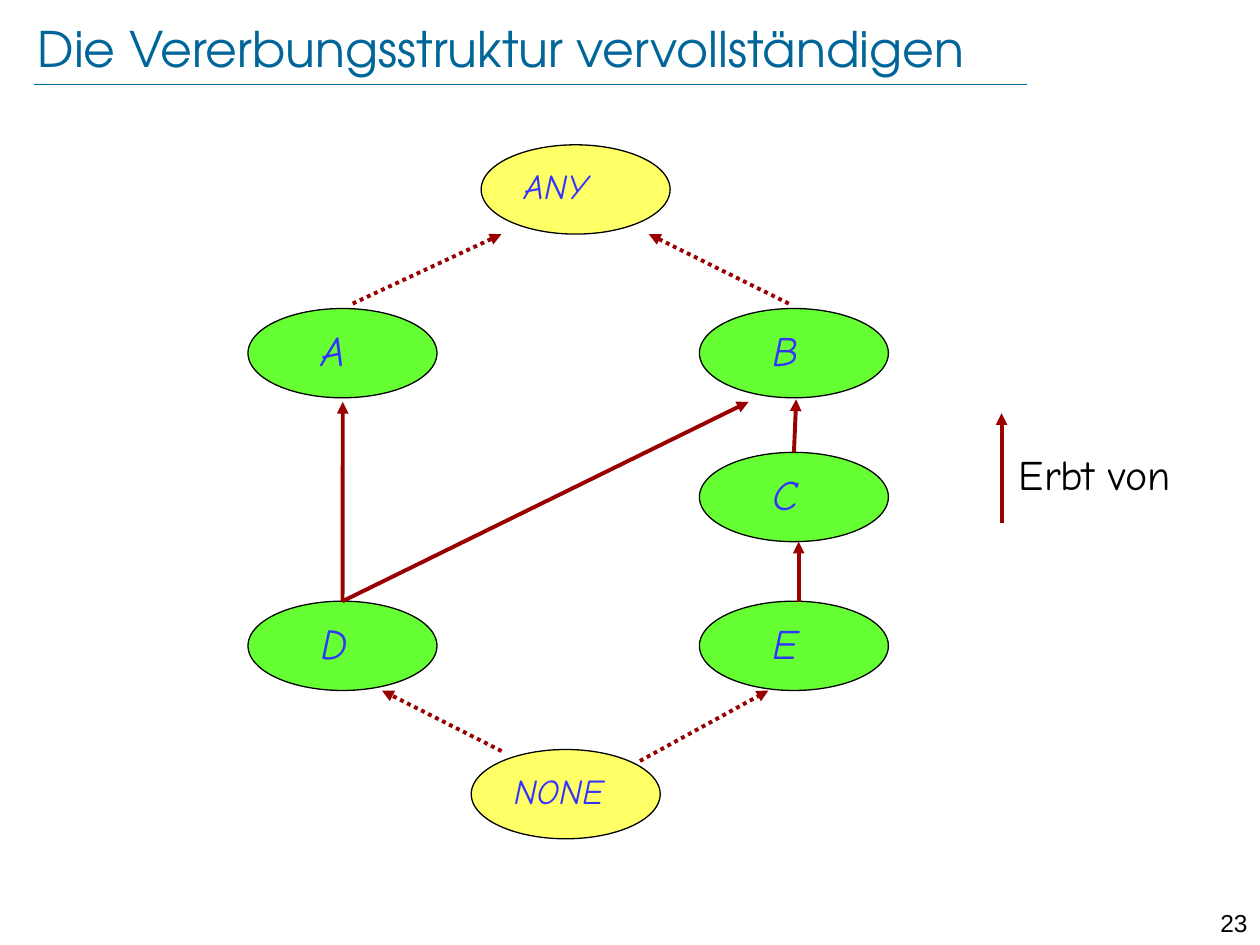
from lxml import etree
from pptx import Presentation
from pptx.dml.color import RGBColor
from pptx.enum.dml import MSO_LINE
from pptx.enum.shapes import MSO_CONNECTOR, MSO_SHAPE
from pptx.enum.text import MSO_ANCHOR, MSO_AUTO_SIZE, PP_ALIGN
from pptx.oxml.ns import qn
from pptx.util import Cm, Pt

STRAIGHT = MSO_CONNECTOR.STRAIGHT
ELLIPSE = MSO_SHAPE.OVAL
DOTTED = MSO_LINE.ROUND_DOT
LEFT, RIGHT = PP_ALIGN.LEFT, PP_ALIGN.RIGHT
TOP_SITE = 0

# Content, lengths in cm
TITLE = "Die Vererbungsstruktur vervollständigen"
LEGEND = "Erbt von"
PAGE_NUMBER = "23"
GREEN, YELLOW, RED, BLUE = "66FF33", "FFFF66", "990000", "006699"
LABEL_COLOR, BLACK = "3333FF", "000000"
LABEL_FONT = "Comic Neue"
NODE_WIDTH, NODE_HEIGHT = 3.81, 1.8
LEFT_COLUMN, RIGHT_COLUMN = 5.0, 14.1
UPPER_ROW, MIDDLE_ROW, LOWER_ROW = 6.22, 9.12, 12.12

# Class name, left, top, fill
NODES = [
    ("A", LEFT_COLUMN, UPPER_ROW, GREEN),
    ("B", RIGHT_COLUMN, UPPER_ROW, GREEN),
    ("D", LEFT_COLUMN, LOWER_ROW, GREEN),
    ("E", RIGHT_COLUMN, LOWER_ROW, GREEN),
    ("C", RIGHT_COLUMN, MIDDLE_ROW, GREEN),
    ("ANY", 9.7, 2.92, YELLOW),
    ("NONE", 9.5, 15.11, YELLOW),
]
# Label by fill: left offset, top offset, width, height, size
LABELS = {GREEN: (1.22, 0.2, 1.2, 1.27, 24), YELLOW: (0.61, 0.27, 2.8, 1.12, 20)}

# Arrows from the top of a class: class, end
TOP_ARROWS = [("D", (6.91, 8.1)), ("D", (15.09, 8.1)), ("C", (16.05, 8.05))]
# Other arrows: start, end, dotted
FREE_ARROWS = [
    ((16.1, 12.14), (16.1, 10.92), False),
    ((20.19, 10.54), (20.19, 8.33), False),
    ((10.11, 15.14), (7.7, 13.92), True),
    ((12.9, 15.34), (15.49, 13.92), True),
    ((7.11, 6.12), (10.11, 4.72), True),
    ((15.9, 6.12), (13.08, 4.72), True),
]


def rgb(color):
    return RGBColor.from_string(color)


def write(shape, text, size, font, color, italic=False, align=LEFT):
    paragraph = shape.text_frame.paragraphs[0]
    paragraph.alignment = align
    run = paragraph.add_run()
    run.text = text
    run.font.size = Pt(size)
    run.font.name = font
    run.font.italic = italic
    run.font.color.rgb = rgb(color)


def add_text(slide, box, *text, **style):
    shape = slide.shapes.add_textbox(*map(Cm, box))
    shape.text_frame.word_wrap = True
    write(shape, *text, **style)


def add_line(slide, start, end, color, width):
    line = slide.shapes.add_connector(STRAIGHT, *map(Cm, (*start, *end)))
    line.line.color.rgb = rgb(color)
    line.line.width = Pt(width)
    etree.SubElement(line._element.spPr, qn("a:effectLst"))
    return line


def add_arrow(slide, start, end, dotted=False):
    arrow = add_line(slide, start, end, RED, 2.25)
    if dotted:
        arrow.line.dash_style = DOTTED
    etree.SubElement(arrow.line._get_or_add_ln(), qn("a:tailEnd"), type="triangle")
    return arrow


def add_node(slide, name, left, top, fill):
    node = slide.shapes.add_shape(
        ELLIPSE, Cm(left), Cm(top), Cm(NODE_WIDTH), Cm(NODE_HEIGHT))
    node.shadow.inherit = False
    node.fill.solid()
    node.fill.fore_color.rgb = rgb(fill)
    node.line.color.rgb = rgb(BLACK)
    node.line.width = Pt(0.75)
    shift_x, shift_y, width, height, size = LABELS[fill]
    add_text(slide, (left + shift_x, top + shift_y, width, height),
             name, size, LABEL_FONT, LABEL_COLOR, italic=True)
    return node


def main():
    presentation = Presentation()
    presentation.slide_width, presentation.slide_height = Cm(25.4), Cm(19.05)
    slide = presentation.slides.add_slide(presentation.slide_layouts[5])

    # Title with rule, page number
    title = slide.shapes.title
    title.left, title.top, title.width, title.height = map(Cm, (0.76, 0.33, 20.68, 1.27))
    frame = title.text_frame
    frame.margin_left = frame.margin_right = frame.margin_top = frame.margin_bottom = 0
    frame.vertical_anchor = MSO_ANCHOR.MIDDLE
    frame.auto_size = MSO_AUTO_SIZE.NONE
    write(title, TITLE, 28, "TeX Gyre Adventor", BLUE)
    add_line(slide, (0.69, 1.7), (20.7, 1.7), BLUE, 0.25)
    add_text(slide, (24.0, 18.19, 1.4, 0.61), PAGE_NUMBER, 14, "Arial", BLACK, align=RIGHT)

    # Classes
    nodes = {name: add_node(slide, name, *rest) for name, *rest in NODES}

    # Inheritance arrows
    for name, end in TOP_ARROWS:
        arrow = add_arrow(slide, end, end)
        arrow.begin_connect(nodes[name], TOP_SITE)
    for start, end, dotted in FREE_ARROWS:
        add_arrow(slide, start, end, dotted)

    # Legend
    add_text(slide, (20.29, 8.92, 4.19, 1.3), LEGEND, 24, LABEL_FONT, BLACK)

    presentation.save("out.pptx")


if __name__ == "__main__":
    main()
